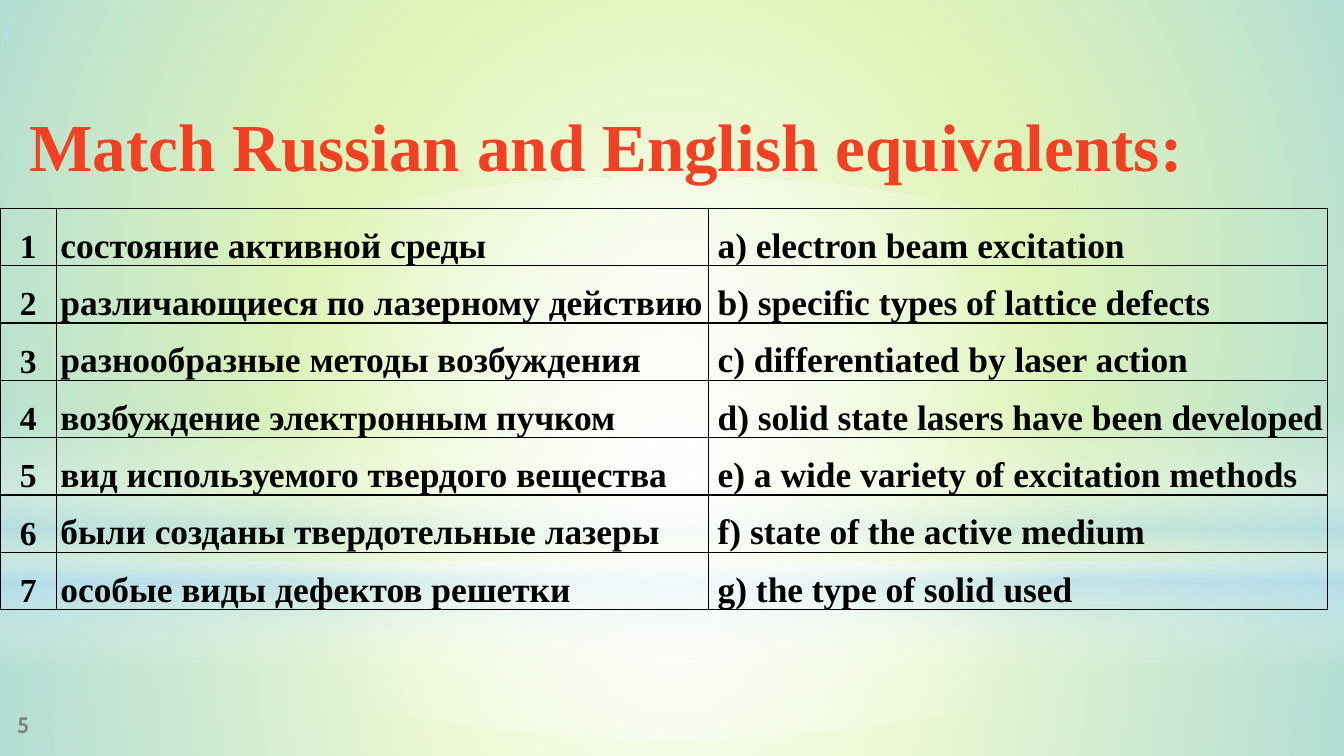
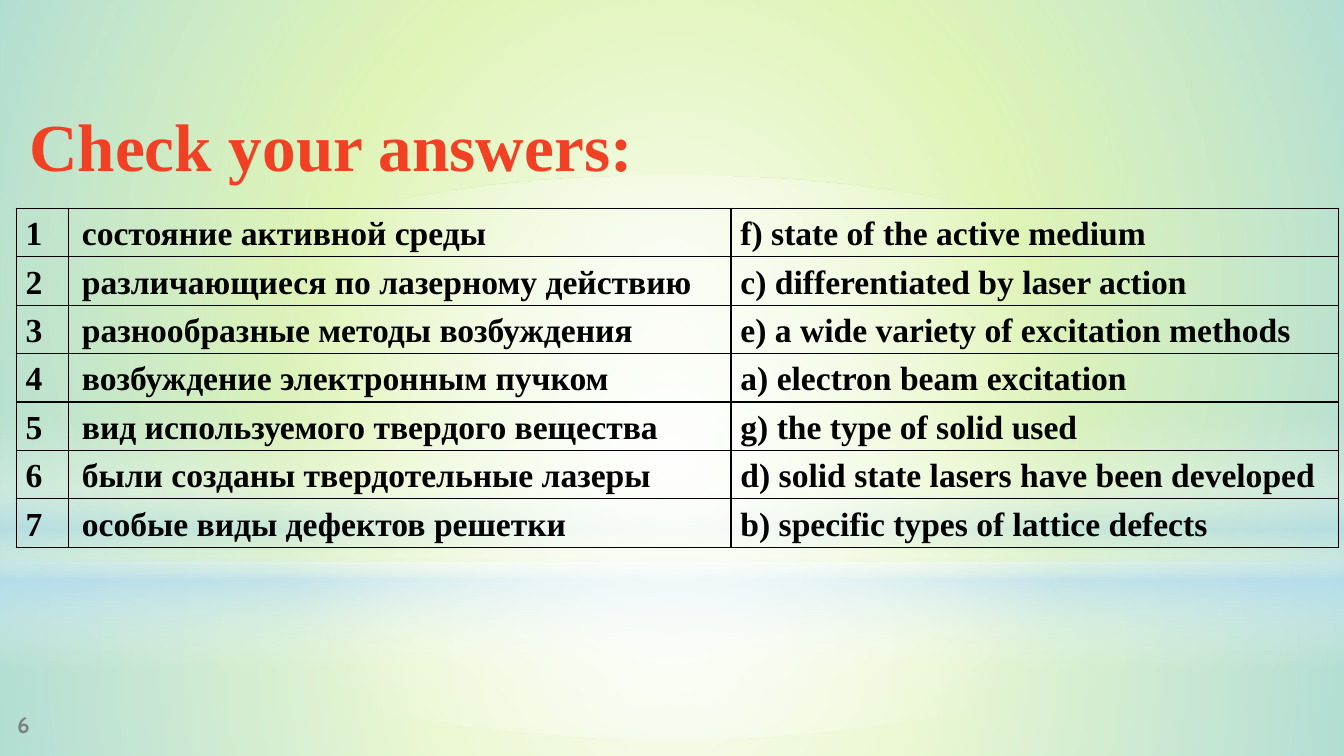
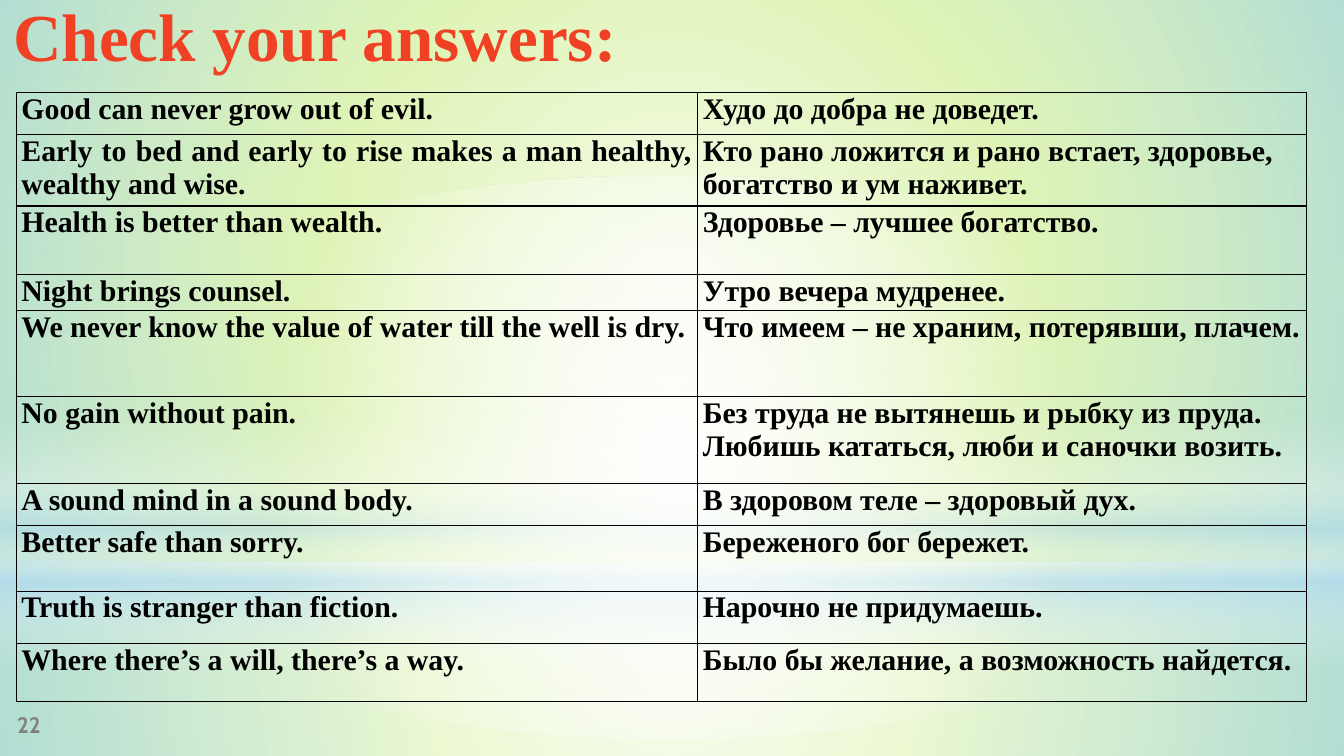
from dataclasses import dataclass

from lxml import etree
from pptx import Presentation
from pptx.dml.color import RGBColor
from pptx.enum.shapes import MSO_SHAPE
from pptx.enum.text import MSO_ANCHOR, PP_ALIGN
from pptx.oxml import parse_xml
from pptx.oxml.ns import nsdecls, qn
from pptx.util import Inches, Pt

RECT = MSO_SHAPE.RECTANGLE
OVAL = MSO_SHAPE.OVAL
TOP, BASE = MSO_ANCHOR.TOP, MSO_ANCHOR.BOTTOM
LEFT, MID, FULL = PP_ALIGN.LEFT, PP_ALIGN.CENTER, PP_ALIGN.JUSTIFY

HEX = {
    "lime": "ABE33F",
    "white": "FFFFFF",
    "sky": "B4DCFA",
    "red": "F14124",
    "gray": "808080",
    "ink": "000000",
}
SERIF, SANS = "Times New Roman", "Cabin"


@dataclass(frozen=True)
class Box:
    left: float
    top: float
    width: float
    height: float

    def place(self) -> tuple:
        return tuple(Inches(v) for v in (self.left, self.top, self.width, self.height))


@dataclass(frozen=True)
class Font:
    name: str
    size: int
    color: str


@dataclass(frozen=True)
class Glow:
    box: Box
    form: int
    stops: tuple
    round: bool = True


@dataclass(frozen=True)
class Col:
    width: float
    size: int
    indent: float = 0
    align: int = LEFT


@dataclass(frozen=True)
class Grid:
    box: Box
    cols: tuple
    highs: tuple
    rows: tuple
    side: float
    space: float | None = 1.2
    anchor: int = TOP
    full: int = 0


@dataclass(frozen=True)
class Page:
    title: str
    box: Box
    number: str
    grid: Grid


GLOWS = (
    Glow(Box(0, 4.19, 10, 1.44), RECT,
         ((0, "white", 91), (37, "white", 76), (100, "sky", 79))),
    Glow(Box(0, 0, 10, 4.19), RECT,
         ((0, "white", 89), (48, "white", 62), (100, "sky", 79))),
    Glow(Box(0, 3.09, 10, 1.88), RECT,
         ((0, "white", 0), (29, "white", 30), (45, "sky", 40),
          (55, "white", 26), (65, "sky", 60), (100, "white", 0)), False),
    Glow(Box(0, 1.31, 10, 4.19), OVAL, ((0, "white", 100), (56, "white", 0))),
)

HEAD = Font(SERIF, 36, "red")
FOOT = Font(SANS, 12, "gray")
HIGH = Box(0.12, 0.61, 9.53, 0.87)
NUMBER = Box(0.03, 5.19, 0.6, 0.43)

TERMS = (
    "состояние активной среды",
    "различающиеся по лазерному действию",
    "разнообразные методы возбуждения",
    "возбуждение электронным пучком",
    "вид используемого твердого вещества",
    "были созданы твердотельные лазеры",
    "особые виды дефектов решетки",
)
MATCHES = {
    "a": "electron beam excitation",
    "b": "specific types of lattice defects",
    "c": "differentiated by laser action",
    "d": "solid state lasers have been developed",
    "e": "a wide variety of excitation methods",
    "f": "state of the active medium",
    "g": "the type of solid used",
}
SAYINGS = (
    ("Good can never grow out of evil.", "Худо до добра не доведет."),
    ("Early to bed and early to rise makes a man healthy, wealthy and wise.",
     "Кто рано ложится и рано встает, здоровье, богатство и ум наживет."),
    ("Health is better than wealth.", "Здоровье – лучшее богатство."),
    ("Night brings counsel.", "Утро вечера мудренее."),
    ("We never know the value of water till the well is dry. ",
     "Что имеем – не храним, потерявши, плачем."),
    ("No gain without pain.",
     "Без труда не вытянешь и рыбку из пруда. Любишь кататься, люби и саночки возить."),
    ("A sound mind in a sound body.", "В здоровом теле – здоровый дух."),
    ("Better safe than sorry.", "Береженого бог бережет."),
    ("Truth is stranger than fiction.", "Нарочно не придумаешь."),
    ("Where there’s a will, there’s a way.", "Было бы желание, а возможность найдется."),
)


def pair(order: str) -> tuple:
    return tuple(
        (str(i), term, f"{key}) {MATCHES[key]}")
        for i, (term, key) in enumerate(zip(TERMS, order), 1)
    )


PAGES = (
    Page("Match Russian and English equivalents:", HIGH, "5",
         Grid(Box(0, 1.55, 9.88, 2.99),
              (Col(0.42, 18, align=MID), Col(4.85, 19, 0.03), Col(4.61, 19, 0.07)),
              (2.99 / len(TERMS),) * len(TERMS), pair("abcdefg"), 0, anchor=BASE)),
    Page("Check your answers:", HIGH, "6",
         Grid(Box(0.12, 1.55, 9.84, 2.3),
              (Col(0.39, 18), Col(4.93, 18, 0.03), Col(4.52, 18)),
              (0,) * len(TERMS), pair("fceagdb"), 0.07)),
    Page("Check your answers:", Box(0, 0.03, 4.76, 0.63), "22",
         Grid(Box(0.12, 0.69, 9.61, 4.51), (Col(5.07, 16), Col(4.53, 16)),
              (0.31, 0.52, 0.51, 0.26, 0.64, 0.65, 0.31, 0.49, 0.39, 0.43),
              SAYINGS, 0.04, space=None, full=3)),
)


def tint(name: str) -> RGBColor:
    return RGBColor.from_string(HEX[name])


def blend(glow: Glow):
    stops = "".join(
        f'<a:gs pos="{pos * 1000}"><a:srgbClr val="{HEX[name]}">'
        f'<a:alpha val="{alpha * 1000}"/></a:srgbClr></a:gs>'
        for pos, name, alpha in glow.stops
    )
    mode = (
        '<a:path path="circle"><a:fillToRect l="50000" t="50000" r="50000" b="50000"/></a:path>'
        if glow.round else '<a:lin ang="5400000" scaled="0"/>'
    )
    return parse_xml(
        f'<a:gradFill {nsdecls("a")} rotWithShape="1"><a:gsLst>{stops}</a:gsLst>{mode}</a:gradFill>'
    )


def dress(deck, layout) -> None:
    fill = deck.slide_master.background.fill
    fill.solid()
    fill.fore_color.rgb = tint("lime")
    for hold in list(layout.placeholders):
        hold.element.getparent().remove(hold.element)


def shine(slide, layout, glow: Glow) -> None:
    shape = slide.shapes.add_shape(glow.form, *glow.box.place())
    shape.shadow.inherit = False
    shape.line.fill.background()
    shape.fill.background()
    props = shape.element.spPr
    props.replace(props.find(qn("a:noFill")), blend(glow))
    layout.shapes.element.append(shape.element)


def write(para, text: str, font: Font) -> None:
    run = para.add_run()
    run.text = text
    run.font.name = font.name
    run.font.size = Pt(font.size)
    run.font.bold = True
    run.font.color.rgb = tint(font.color)


def label(slide, box: Box, text: str, font: Font, anchor: int = TOP) -> None:
    frame = slide.shapes.add_textbox(*box.place()).text_frame
    frame.word_wrap = True
    frame.vertical_anchor = anchor
    frame.margin_left = frame.margin_right = Inches(0.1)
    frame.margin_top = frame.margin_bottom = Inches(0.1)
    write(frame.paragraphs[0], text, font)


def edge(cell) -> None:
    props = cell._tc.get_or_add_tcPr()
    for i, tag in enumerate(("lnL", "lnR", "lnT", "lnB")):
        line = etree.Element(qn(f"a:{tag}"), w=str(Pt(0.75)))
        solid = etree.SubElement(line, qn("a:solidFill"))
        etree.SubElement(solid, qn("a:srgbClr"), val=HEX["ink"])
        props.insert(i, line)


def fill_cell(cell, text: str, col: Col, grid: Grid, align: int) -> None:
    cell.fill.background()
    edge(cell)
    cell.vertical_anchor = grid.anchor
    cell.margin_left = cell.margin_right = Inches(grid.side)
    cell.margin_top = cell.margin_bottom = 0
    para = cell.text_frame.paragraphs[0]
    para.alignment = align
    para.line_spacing = grid.space
    para._p.get_or_add_pPr().set("marL", str(Inches(col.indent)))
    write(para, text, Font(SERIF, col.size, "ink"))


def match(slide, grid: Grid) -> None:
    frame = slide.shapes.add_table(len(grid.rows), len(grid.cols), *grid.box.place())
    table = frame.table
    table.first_row = table.horz_banding = False
    for slot, col in zip(table.columns, grid.cols):
        slot.width = Inches(col.width)
    for r, (high, row) in enumerate(zip(grid.highs, grid.rows)):
        table.rows[r].height = Inches(high)
        for c, (text, col) in enumerate(zip(row, grid.cols)):
            align = FULL if c == 0 and r < grid.full else col.align
            fill_cell(table.cell(r, c), text, col, grid, align)
    frame.height = Inches(grid.box.height)


def main() -> None:
    deck = Presentation()
    deck.slide_width = Inches(10)
    deck.slide_height = Inches(10) * 9 // 16
    layout = deck.slide_layouts[6]
    dress(deck, layout)
    slides = [deck.slides.add_slide(layout) for _ in PAGES]
    for glow in GLOWS:
        shine(slides[0], layout, glow)
    for i, shape in enumerate(layout.shapes, 2):
        shape.element.nvSpPr.cNvPr.set("id", str(i))
    for slide, page in zip(slides, PAGES):
        label(slide, page.box, page.title, HEAD, BASE)
        label(slide, NUMBER, page.number, FOOT)
        match(slide, page.grid)
    deck.save("out.pptx")


if __name__ == "__main__":
    main()
